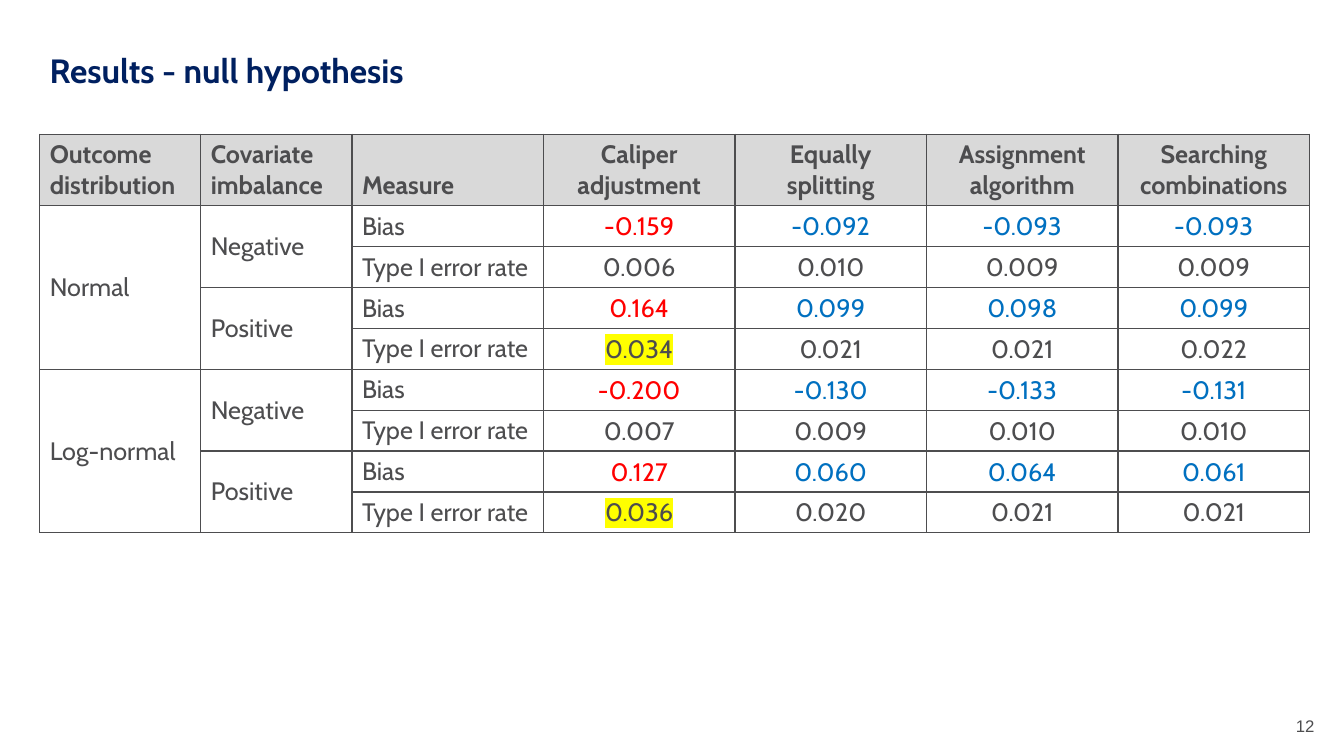
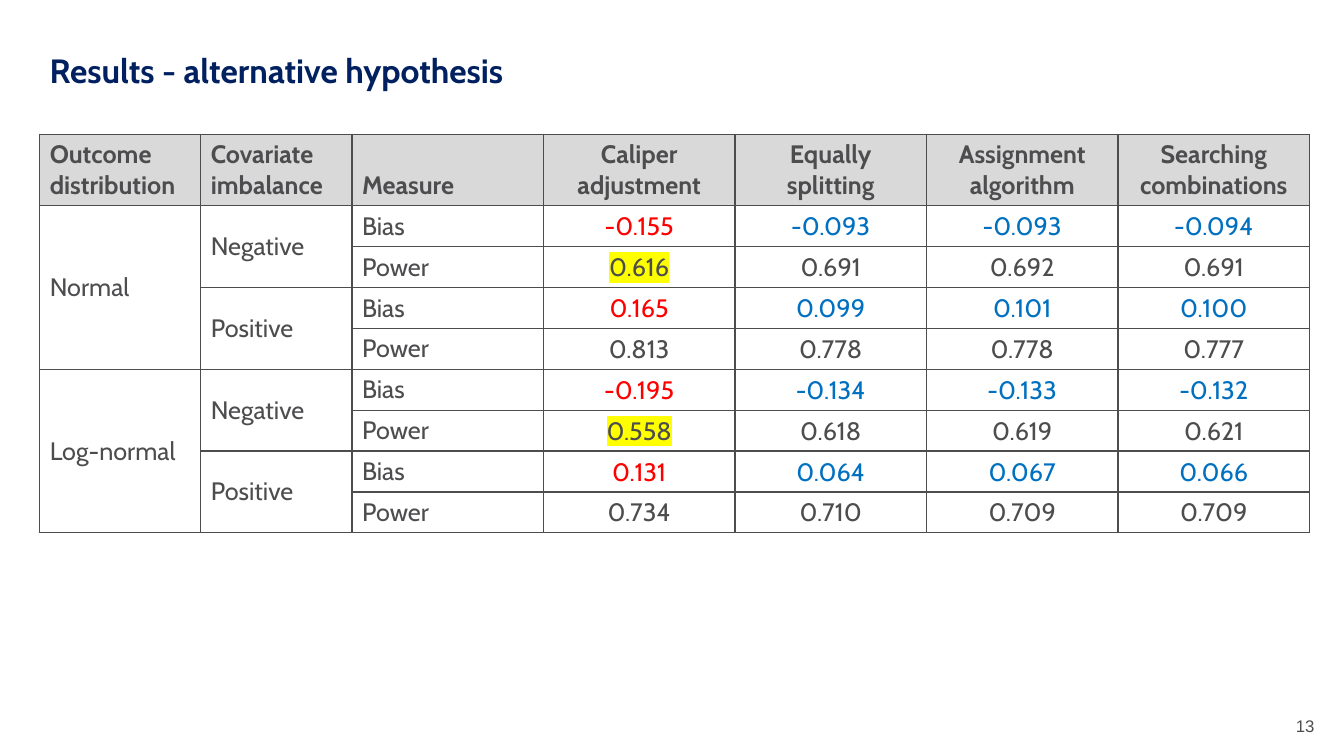
from itertools import product
from lxml.etree import SubElement
from pptx import Presentation
from pptx.dml.color import RGBColor
from pptx.enum.text import MSO_ANCHOR, PP_ALIGN
from pptx.oxml.ns import qn
from pptx.util import Pt

NAVY = RGBColor(0x00, 0x20, 0x60)
GREY = RGBColor(0x4D, 0x4D, 0x4F)
HEADER_GREY = RGBColor(0xD9, 0xD9, 0xD9)
RED = RGBColor(0xFF, 0x00, 0x00)
BLUE = RGBColor(0x00, 0x70, 0xC0)
YELLOW = RGBColor(0xFF, 0xFF, 0x00)

HEADINGS = ["Outcome distribution", "Covariate imbalance", "Measure", "Caliper adjustment",
            "Equally splitting", "Assignment algorithm", "Searching combinations"]
DISTRIBUTIONS = ["Normal", "Log-normal"]
IMBALANCES = ["Negative", "Positive"]
RESULTS = [
    {
        "title": "Results - null hypothesis",
        "page": "12",
        "measures": ["Bias", "Type I error rate"],
        "highlighted": "Positive",
        "values": [
            ["-0.159", "-0.092", "-0.093", "-0.093"],
            ["0.006", "0.010", "0.009", "0.009"],
            ["0.164", "0.099", "0.098", "0.099"],
            ["0.034", "0.021", "0.021", "0.022"],
            ["-0.200", "-0.130", "-0.133", "-0.131"],
            ["0.007", "0.009", "0.010", "0.010"],
            ["0.127", "0.060", "0.064", "0.061"],
            ["0.036", "0.020", "0.021", "0.021"],
        ],
    },
    {
        "title": "Results - alternative hypothesis",
        "page": "13",
        "measures": ["Bias", "Power"],
        "highlighted": "Negative",
        "values": [
            ["-0.155", "-0.093", "-0.093", "-0.094"],
            ["0.616", "0.691", "0.692", "0.691"],
            ["0.165", "0.099", "0.101", "0.100"],
            ["0.813", "0.778", "0.778", "0.777"],
            ["-0.195", "-0.134", "-0.133", "-0.132"],
            ["0.558", "0.618", "0.619", "0.621"],
            ["0.131", "0.064", "0.067", "0.066"],
            ["0.734", "0.710", "0.709", "0.709"],
        ],
    },
]

LEFT, TABLE_TOP = 28.4, 95.8
COLUMN_WIDTHS = [115, 108] + [136.8] * 5
HEADER_HEIGHT, ROW_HEIGHT = 51.2, 29.2
LABEL_COLUMNS = 3


def write(frame, text, size, color, font="Cabin", bold=False, align=PP_ALIGN.LEFT):
    frame.word_wrap = True
    paragraph = frame.paragraphs[0]
    paragraph.alignment = align
    paragraph.font.name = font
    paragraph.font.size = Pt(size)
    paragraph.font.bold = bold
    paragraph.font.color.rgb = color
    paragraph.add_run().text = text
    return paragraph


def add_text(slide, box, *args, anchor=MSO_ANCHOR.TOP, **style):
    frame = slide.shapes.add_textbox(*map(Pt, box)).text_frame
    frame.vertical_anchor = anchor
    return write(frame, *args, **style)


def highlight(paragraph):
    properties = paragraph.runs[0].font._element
    mark = SubElement(properties, qn("a:highlight"))
    SubElement(mark, qn("a:srgbClr"), val=str(YELLOW))


def add_borders(cell):
    properties = cell._tc.get_or_add_tcPr()
    for position, side in enumerate(("a:lnL", "a:lnR", "a:lnT", "a:lnB")):
        line = properties.makeelement(qn(side), {"w": str(Pt(1))})
        properties.insert(position, line)
        fill = SubElement(line, qn("a:solidFill"))
        SubElement(fill, qn("a:srgbClr"), val=str(GREY))


def fill_cell(cell, text, anchor=MSO_ANCHOR.MIDDLE, color=GREY, **style):
    cell.vertical_anchor = anchor
    return write(cell.text_frame, text, 18, color, **style)


def add_results_table(slide, result):
    conditions = list(product(DISTRIBUTIONS, IMBALANCES, result["measures"]))
    heights = [HEADER_HEIGHT] + [ROW_HEIGHT] * len(conditions)
    table = slide.shapes.add_table(
        len(heights), len(HEADINGS), Pt(LEFT), Pt(TABLE_TOP),
        Pt(sum(COLUMN_WIDTHS)), Pt(sum(heights))).table
    table.first_row = table.horz_banding = False
    for column, width in zip(table.columns, COLUMN_WIDTHS):
        column.width = Pt(width)
    for row, height in zip(table.rows, heights):
        row.height = Pt(height)
    for cell in table.iter_cells():
        cell.fill.background()
        add_borders(cell)

    for column, heading in enumerate(HEADINGS):
        cell = table.cell(0, column)
        cell.fill.solid()
        cell.fill.fore_color.rgb = HEADER_GREY
        is_label = column < LABEL_COLUMNS
        fill_cell(cell, heading, bold=True,
                  anchor=MSO_ANCHOR.BOTTOM if is_label else MSO_ANCHOR.MIDDLE,
                  align=PP_ALIGN.LEFT if is_label else PP_ALIGN.CENTER)

    spans = [len(IMBALANCES) * len(result["measures"]), len(result["measures"]), 1]
    for index, (condition, values) in enumerate(zip(conditions, result["values"])):
        row = index + 1
        for column, (label, span) in enumerate(zip(condition, spans)):
            if index % span == 0:
                cell = table.cell(row, column)
                if span > 1:
                    cell.merge(table.cell(row + span - 1, column))
                fill_cell(cell, label)

        _, imbalance, measure = condition
        is_bias = measure == "Bias"
        for method, value in enumerate(values):
            cell = table.cell(row, LABEL_COLUMNS + method)
            cell.margin_left = cell.margin_right = cell.margin_top = Pt(0.75)
            cell.margin_bottom = Pt(0)
            color = (BLUE if method else RED) if is_bias else GREY
            paragraph = fill_cell(cell, value, color=color, align=PP_ALIGN.CENTER)
            if method == 0 and not is_bias and imbalance == result["highlighted"]:
                highlight(paragraph)


def main():
    deck = Presentation()
    deck.slide_width, deck.slide_height = Pt(960), Pt(540)
    for result in RESULTS:
        slide = deck.slides.add_slide(deck.slide_layouts[6])
        title = add_text(slide, (LEFT, 24.5, 865.4, 54), result["title"], 24, NAVY,
                         bold=True, anchor=MSO_ANCHOR.MIDDLE)
        title.line_spacing = 0.9
        add_text(slide, (912.2, 507.6, 40.3, 25.2), result["page"], 12, GREY,
                 font="Arial", align=PP_ALIGN.CENTER)
        add_results_table(slide, result)
    deck.save("out.pptx")


if __name__ == "__main__":
    main()
